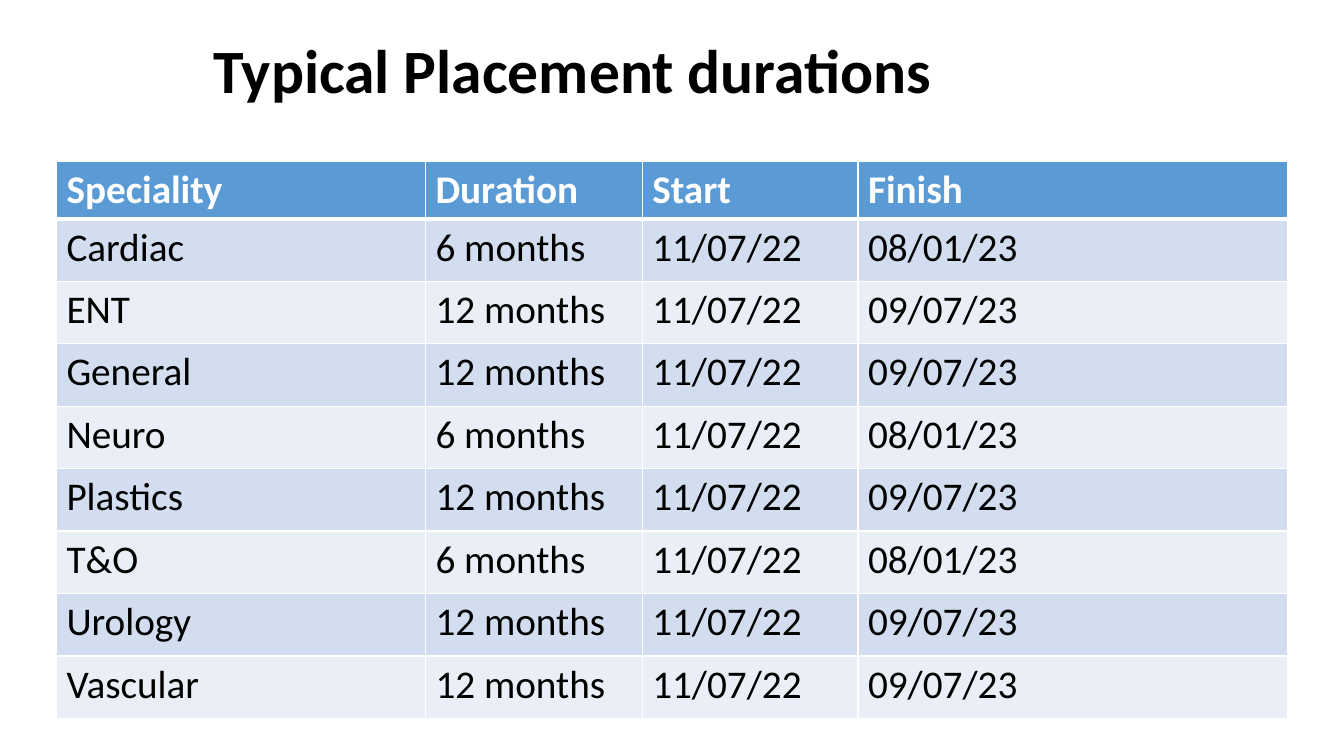
from dataclasses import astuple, dataclass

from lxml import etree
from pptx import Presentation
from pptx.dml.color import RGBColor
from pptx.enum import text
from pptx.oxml import ns
from pptx.util import Inches, Pt

WIDTH, HEIGHT = 13.33, 7.5
FONT = "Calibri"
BLACK, WHITE = "000000", "FFFFFF"
HEADER_FILL = "5B9BD5"
BAND_FILLS = ("D2DEEF", "EAEFF7")
COLUMN_WIDTHS = (3.66, 2.15, 2.14, 4.26)
HEADER_HEIGHT, ROW_HEIGHT = 0.57, 0.62


@dataclass
class Placement:
    speciality: str
    duration: str
    start: str
    finish: str


START = "11/07/22"
HALF_YEAR = ("6 months", START, "08/01/23")
FULL_YEAR = ("12 months", START, "09/07/23")

HEADINGS = Placement("Speciality", "Duration", "Start", "Finish")
PLACEMENTS = [
    Placement("Cardiac", *HALF_YEAR),
    Placement("ENT", *FULL_YEAR),
    Placement("General", *FULL_YEAR),
    Placement("Neuro", *HALF_YEAR),
    Placement("Plastics", *FULL_YEAR),
    Placement("T&O", *HALF_YEAR),
    Placement("Urology", *FULL_YEAR),
    Placement("Vascular", *FULL_YEAR),
]


def colour(value: str) -> RGBColor:
    return RGBColor.from_string(value)


def write(frame, words: str, *, size: float, ink: str = BLACK, bold: bool = False,
          align=text.PP_ALIGN.LEFT, spacing: float = 1.0) -> None:
    para = frame.paragraphs[0]
    para.alignment = align
    para.line_spacing = spacing
    span = para.add_run()
    span.text = words
    span.font.name = FONT
    span.font.size = Pt(size)
    span.font.bold = bold
    span.font.color.rgb = colour(ink)


def add_borders(cell, *, top: float = 1, bottom: float = 1) -> None:
    properties = cell._tc.get_or_add_tcPr()
    sides = {"lnL": 1, "lnR": 1, "lnT": top, "lnB": bottom}
    # Borders come before the fill in a cell's properties
    for place, (side, points) in enumerate(sides.items()):
        line = etree.Element(ns.qn(f"a:{side}"), w=str(Pt(points)))
        fill = etree.SubElement(line, ns.qn("a:solidFill"))
        etree.SubElement(fill, ns.qn("a:srgbClr"), val=WHITE)
        properties.insert(place, line)


def add_title(page, words: str) -> None:
    box = page.shapes.add_textbox(0, 0, Inches(11.5), Inches(1.45))
    box.text_frame.word_wrap = True
    box.text_frame.vertical_anchor = text.MSO_ANCHOR.MIDDLE
    write(box.text_frame, words, size=44, bold=True,
          align=text.PP_ALIGN.CENTER, spacing=0.9)


def add_placements(page, left: float, top: float) -> None:
    rows = [HEADINGS, *PLACEMENTS]
    heights = [HEADER_HEIGHT] + [ROW_HEIGHT] * len(PLACEMENTS)
    table = page.shapes.add_table(
        len(rows), len(COLUMN_WIDTHS), Inches(left), Inches(top),
        Inches(sum(COLUMN_WIDTHS)), Inches(sum(heights))).table
    for column, width in zip(table.columns, COLUMN_WIDTHS):
        column.width = Inches(width)
    for index, (row, height) in enumerate(zip(rows, heights)):
        table.rows[index].height = Inches(height)
        header = index == 0
        for column, words in enumerate(astuple(row)):
            cell = table.cell(index, column)
            cell.fill.solid()
            cell.fill.fore_color.rgb = colour(
                HEADER_FILL if header else BAND_FILLS[(index - 1) % 2])
            add_borders(cell, top=3 if index == 1 else 1, bottom=3 if header else 1)
            write(cell.text_frame, words, size=28,
                  ink=WHITE if header else BLACK, bold=header)


def main() -> None:
    deck = Presentation()
    deck.slide_width, deck.slide_height = Inches(WIDTH), Inches(HEIGHT)
    page = deck.slides.add_slide(deck.slide_layouts[6])

    # Title
    add_title(page, "Typical Placement durations ")

    # Placement table
    add_placements(page, left=0.56, top=1.6)

    deck.save("out.pptx")


if __name__ == "__main__":
    main()
